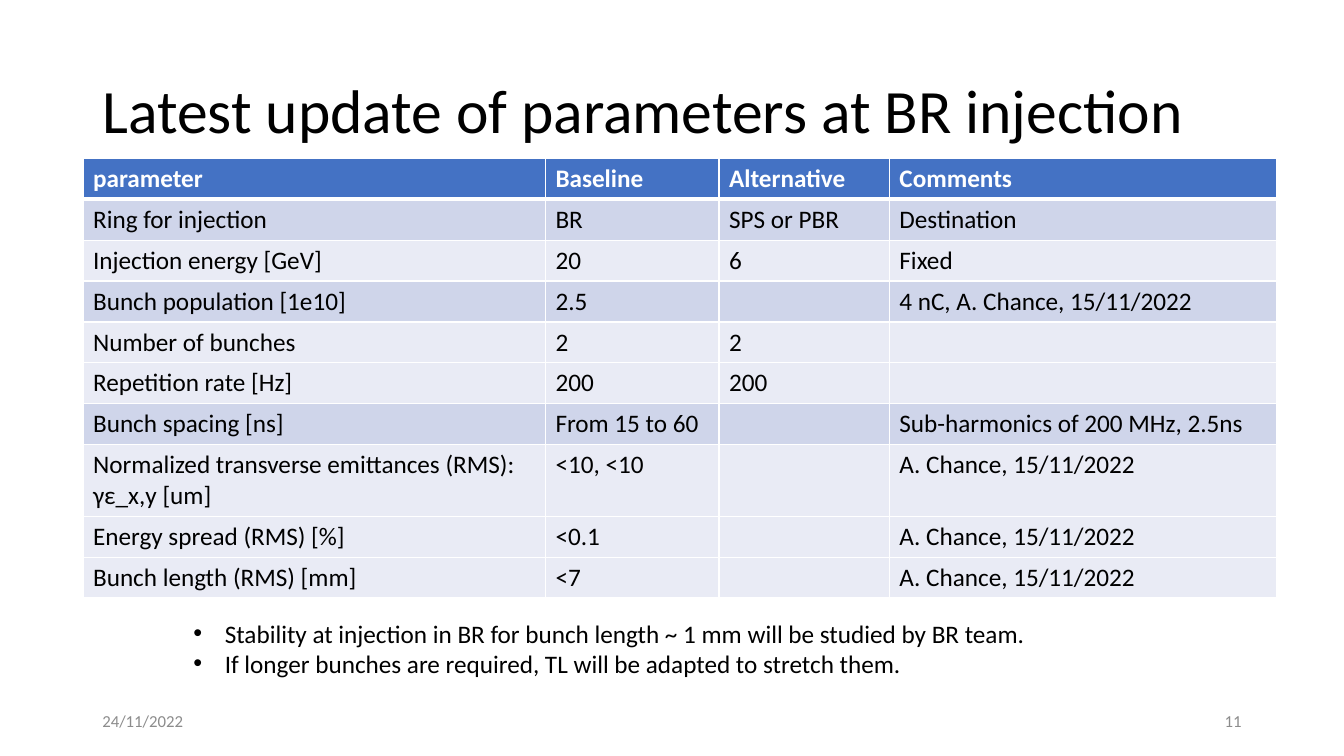
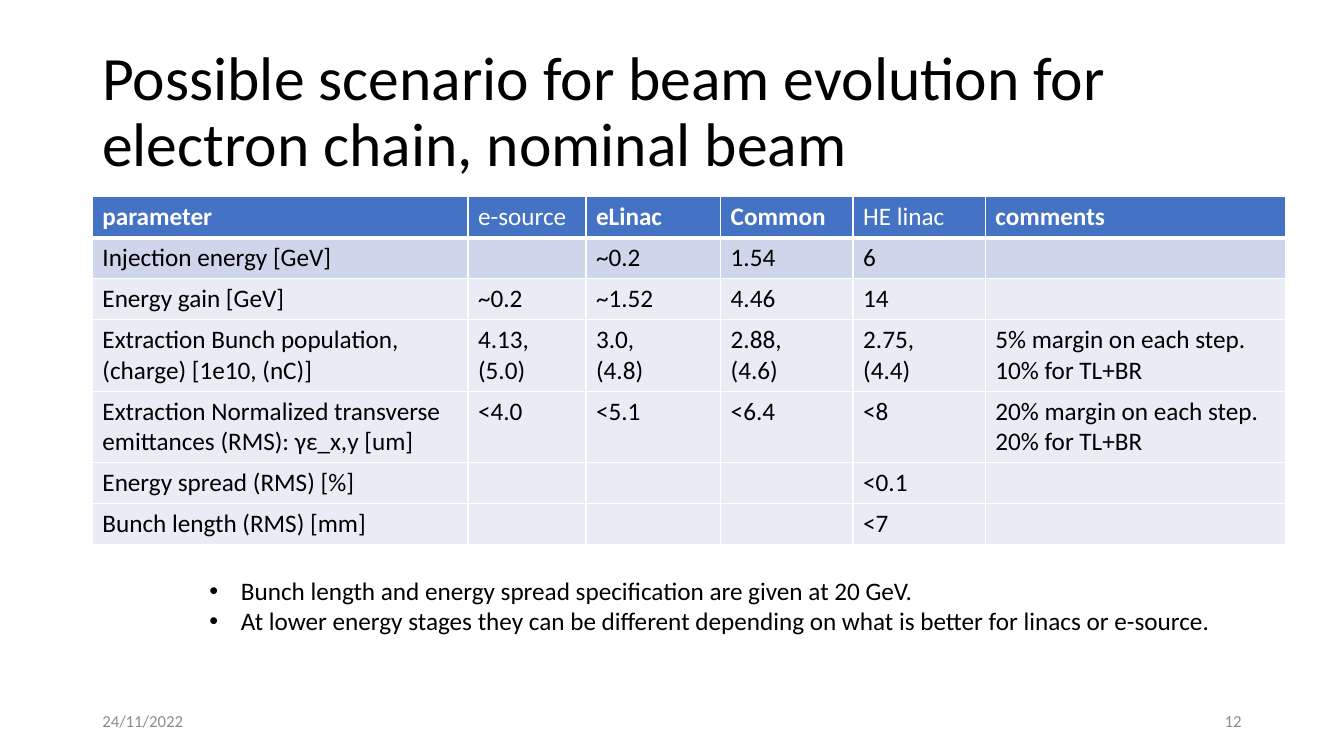
from lxml import etree
from pptx import Presentation
from pptx.dml.color import RGBColor
from pptx.enum.text import MSO_ANCHOR as Anchor, MSO_AUTO_SIZE as AutoSize, PP_ALIGN as Align
from pptx.oxml.ns import qn
from pptx.util import Pt

FONT = "Calibri"
BLACK, WHITE, GREY = "000000", "FFFFFF", "8C8C8C"
HEADER, BAND, PLAIN = "4472C4", "CFD5EA", "E9EBF5"
MARGIN = 66
ROW_HEIGHT, LINE_HEIGHT = 29.2, 22
DATE = "24/11/2022"


def color(value):
    return RGBColor.from_string(value)


class Deck:
    """Holds the shared style and the current slide."""

    def __init__(self):
        self.presentation = Presentation()
        self.presentation.slide_width = Pt(960)
        self.presentation.slide_height = Pt(540)
        self.slide = None

    def add_slide(self, title, number):
        layout = self.presentation.slide_layouts[6]
        self.slide = self.presentation.slides.add_slide(layout)
        heading = self.text(title, MARGIN, 28.75, 828, 104.4, 44)
        heading.paragraphs[0].line_spacing = 0.9
        self.text(DATE, MARGIN, 500.5, 216, 28.75, 12, GREY)
        self.text(str(number), 678, 500.5, 216, 28.75, 12, GREY, Align.RIGHT)

    def format_text(self, text_frame, size, font_color, bold=False):
        for paragraph in text_frame.paragraphs:
            for run in paragraph.runs:
                run.font.name = FONT
                run.font.size = Pt(size)
                run.font.bold = bold
                run.font.color.rgb = color(font_color)

    def text(self, content, left, top, width, height, size,
             font_color=BLACK, align=Align.LEFT, anchor=Anchor.MIDDLE):
        shape = self.slide.shapes.add_textbox(Pt(left), Pt(top), Pt(width), Pt(height))
        text_frame = shape.text_frame
        text_frame.word_wrap = True
        text_frame.vertical_anchor = anchor
        text_frame.text = content
        for paragraph in text_frame.paragraphs:
            paragraph.alignment = align
        self.format_text(text_frame, size, font_color)
        return text_frame

    def bullets(self, items, left, top, width):
        text_frame = self.text("\n".join(items), left, top, width, 51, 18, anchor=Anchor.TOP)
        text_frame.word_wrap = False
        text_frame.auto_size = AutoSize.SHAPE_TO_FIT_TEXT
        for paragraph in text_frame.paragraphs:
            properties = paragraph._p.get_or_add_pPr()
            properties.set("marL", str(Pt(22.5)))
            properties.set("indent", str(Pt(-22.5)))
            etree.SubElement(properties, qn("a:buFont"), typeface="Arial")
            etree.SubElement(properties, qn("a:buChar"), char="•")

    def borders(self, cell, top, bottom):
        properties = cell._tc.get_or_add_tcPr()
        sides = (("lnL", 1), ("lnR", 1), ("lnT", top), ("lnB", bottom))
        for position, (side, width) in enumerate(sides):
            line = etree.Element(qn(f"a:{side}"), w=str(Pt(width)))
            fill = etree.SubElement(line, qn("a:solidFill"))
            etree.SubElement(fill, qn("a:srgbClr"), val=WHITE)
            properties.insert(position, line)

    def table(self, rows, left, top, widths, banded, tall, light_headers=()):
        """Row 0 is the header; banded and tall hold row numbers."""
        height = len(rows) * ROW_HEIGHT + len(tall) * LINE_HEIGHT
        frame = self.slide.shapes.add_table(
            len(rows), len(widths), Pt(left), Pt(top), Pt(sum(widths)), Pt(height))
        table = frame.table
        table.horz_banding = False
        for column, width in zip(table.columns, widths):
            column.width = Pt(width)
        for index, values in enumerate(rows):
            is_header = index == 0
            table.rows[index].height = Pt(ROW_HEIGHT + LINE_HEIGHT * (index in tall))
            fill = HEADER if is_header else BAND if index in banded else PLAIN
            for cell, value in zip(table.rows[index].cells, values):
                cell.text_frame.text = value
                self.format_text(cell.text_frame, 18, WHITE if is_header else BLACK,
                                 is_header and value not in light_headers)
                cell.fill.solid()
                cell.fill.fore_color.rgb = color(fill)
                self.borders(cell, 3 if index == 1 else 1, 3 if is_header else 1)


def main():
    deck = Deck()

    # Parameters at injection
    deck.add_slide("Latest update of parameters at BR injection", 11)
    source = "A. Chance, 15/11/2022"
    deck.table([
        ["parameter", "Baseline", "Alternative", "Comments"],
        ["Ring for injection", "BR", "SPS or PBR", "Destination"],
        ["Injection energy [GeV]", "20", "6", "Fixed"],
        ["Bunch population [1e10]", "2.5", "", f"4 nC, {source}"],
        ["Number of bunches", "2", "2", ""],
        ["Repetition rate [Hz]", "200", "200", ""],
        ["Bunch spacing [ns]", "From 15 to 60", "", "Sub-harmonics of 200 MHz, 2.5ns"],
        ["Normalized transverse emittances (RMS): γε_x,y [um]", "<10, <10", "", source],
        ["Energy spread (RMS) [%]", "<0.1", "", source],
        ["Bunch length (RMS) [mm]", "<7", "", source],
    ], 59.3, 113.2, [330.3, 124, 121.7, 276.5], banded={1, 3, 6}, tall={7})
    deck.bullets([
        "Stability at injection in BR for bunch length ~ 1 mm will be studied by BR team.",
        "If longer bunches are required, TL will be adapted to stretch them.",
    ], 131, 437.8, 616.3)

    # Beam evolution along the electron chain
    deck.add_slide("Possible scenario for beam evolution for electron chain, nominal beam", 12)
    deck.table([
        ["parameter", "e-source", "eLinac", "Common", "HE linac", "comments"],
        ["Injection energy [GeV]", "", "~0.2", "1.54", "6", ""],
        ["Energy gain [GeV]", "~0.2", "~1.52", "4.46", "14", ""],
        ["Extraction Bunch population, (charge) [1e10, (nC)]", "4.13,\n(5.0)", "3.0,\n(4.8)",
         "2.88,\n(4.6)", "2.75,\n(4.4)", "5% margin on each step. 10% for TL+BR"],
        ["Extraction Normalized transverse emittances (RMS): γε_x,y [um]", "<4.0", "<5.1",
         "<6.4", "<8", "20% margin on each step. 20% for TL+BR"],
        ["Energy spread (RMS) [%]", "", "", "", "<0.1", ""],
        ["Bunch length (RMS) [mm]", "", "", "", "<7", ""],
    ], MARGIN, 140.6, [268.3, 84.3, 96.2, 94.6, 94.5, 214.7], banded={1}, tall={3, 4},
        light_headers={"e-source", "HE linac"})
    deck.bullets([
        "Bunch length and energy spread specification are given at 20 GeV.",
        "At lower energy stages they can be different depending on what is better "
        "for linacs or e-source.",
    ], 142.5, 407.5, 738.7)

    deck.presentation.save("out.pptx")


if __name__ == "__main__":
    main()
